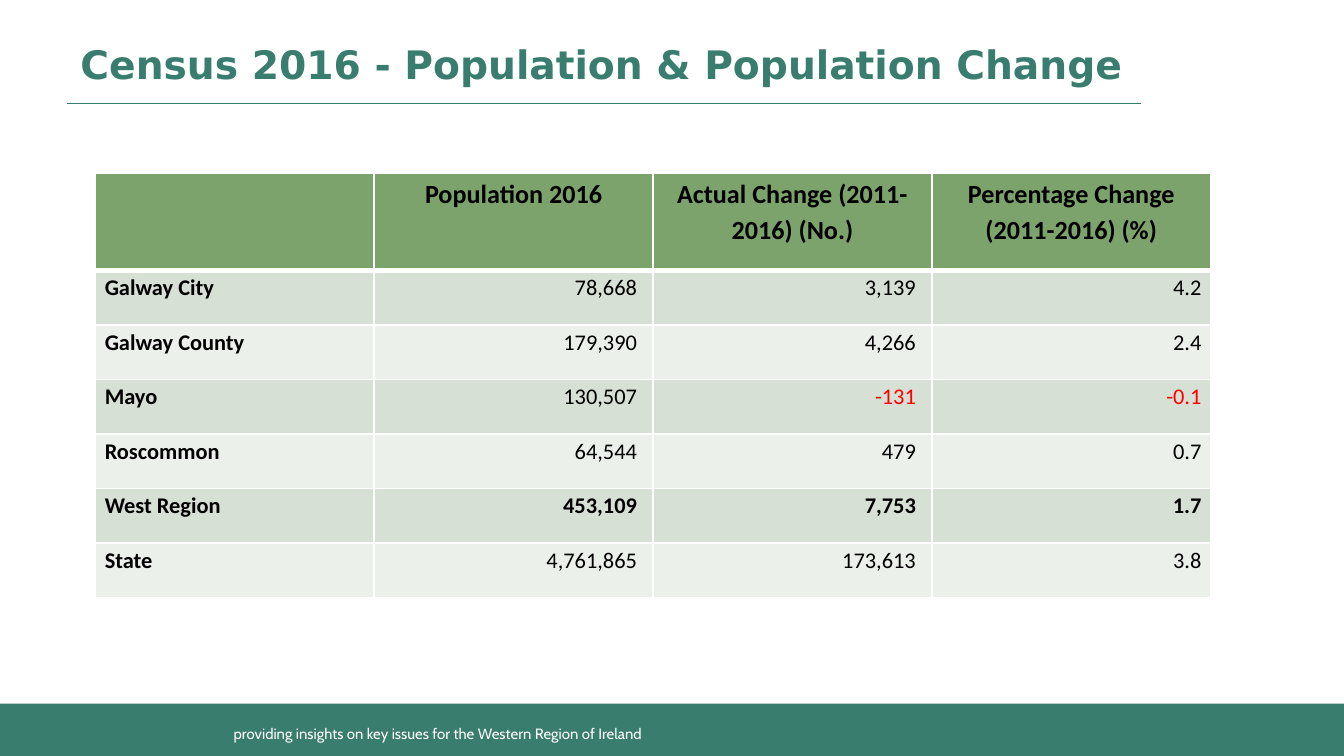
from lxml import etree
from pptx import Presentation
from pptx import util as u
from pptx.dml.color import RGBColor
from pptx.enum import shapes, text
from pptx.oxml import ns

COLORS = {
    "teal": "397D6E", "header": "7CA36C", "band_dark": "D7E0D4",
    "band_light": "ECF0EB", "white": "FFFFFF", "black": "000000",
    "negative": "FF0000",
}
PAGE_WIDTH = 10
PAGE_HEIGHT = PAGE_WIDTH * 9 / 16
HEADINGS = ["", "Population 2016", "Actual Change (2011-2016) (No.)",
            "Percentage Change (2011-2016) (%)"]
AREAS = [
    ["Galway City", "78,668", "3,139", "4.2"],
    ["Galway County", "179,390", "4,266", "2.4"],
    ["Mayo", "130,507", "-131", "-0.1"],
    ["Roscommon", "64,544", "479", "0.7"],
    ["West Region", "453,109", "7,753", "1.7"],
    ["State", "4,761,865", "173,613", "3.8"],
]


def rgb(name):
    return RGBColor.from_string(COLORS[name])


def inches(*lengths):
    return [u.Inches(length) for length in lengths]


def write(para, words, color, **formats):
    span = para.add_run()
    span.text = words
    span.font.color.rgb = rgb(color)
    for name, value in formats.items():
        setattr(span.font, name, value)


def add_label(page, bounds, words, color, **formats):
    box = page.shapes.add_textbox(*inches(*bounds))
    frame = box.text_frame
    frame.word_wrap = True
    frame.vertical_anchor = text.MSO_ANCHOR.MIDDLE
    write(frame.paragraphs[0], words, color, **formats)


def add_title(page, left, top, width, height):
    add_label(page, (left, top, width, 0.45),
              "Census 2016 - Population & Population Change", "teal",
              name="DejaVu Sans", size=u.Pt(21), bold=True)
    rule = page.shapes.add_connector(
        shapes.MSO_CONNECTOR.STRAIGHT,
        *inches(left, top + height, left + width, top + height))
    rule.line.color.rgb = rgb("teal")
    rule.line.width = u.Pt(1)
    etree.SubElement(rule._element.spPr, ns.qn("a:effectLst"))


def add_footer(page, left, top, width, height):
    band = page.shapes.add_shape(shapes.MSO_SHAPE.RECTANGLE,
                                 *inches(left, top, width, height))
    band.shadow.inherit = False
    band.fill.solid()
    band.fill.fore_color.rgb = rgb("teal")
    band.line.fill.background()
    add_label(page, (left + 1.64, top + 0.1, 4.31, 0.24),
              "providing insights on key issues for the Western Region of Ireland",
              "white", name="Cabin", size=u.Pt(8))


def add_borders(cell, bottom):
    """Draw white cell borders; bottom is the width of the lower one in points."""
    properties = cell._tc.get_or_add_tcPr()
    for side, points in (("L", 1), ("R", 1), ("T", 1), ("B", bottom)):
        line = etree.SubElement(properties, ns.qn(f"a:ln{side}"), w=str(u.Pt(points)))
        fill = etree.SubElement(line, ns.qn("a:solidFill"))
        etree.SubElement(fill, ns.qn("a:srgbClr"), val=COLORS["white"])


def fill_cell(cell, words, row, column):
    is_header = row == 0
    is_count = not is_header and column in (1, 2)
    margins = {"margin_left": 0.07, "margin_right": 0.12 if is_count else 0.07,
               "margin_top": 0, "margin_bottom": 0}
    for name, value in margins.items():
        setattr(cell, name, u.Inches(value))

    add_borders(cell, 3 if is_header else 1)
    cell.fill.solid()
    band = "band_dark" if row % 2 else "band_light"
    cell.fill.fore_color.rgb = rgb("header" if is_header else band)

    para = cell.text_frame.paragraphs[0]
    para.line_spacing = 1.15
    if is_header:
        para.alignment = text.PP_ALIGN.CENTER
    else:
        para.alignment = text.PP_ALIGN.RIGHT if column else text.PP_ALIGN.LEFT
    if words:
        is_total = not is_header and AREAS[row - 1][0] == "West Region"
        write(para, words, "negative" if words.startswith("-") else "black",
              name="Calibri", size=u.Pt(14 if is_header else 12),
              bold=is_header or column == 0 or is_total)


def add_population_table(page, left, top, width, height):
    rows = [HEADINGS] + AREAS
    header_height = 0.72
    body_height = (height - header_height) / len(AREAS)
    table = page.shapes.add_table(len(rows), len(HEADINGS),
                                  *inches(left, top, width, height)).table
    for column in table.columns:
        column.width = u.Inches(width / len(HEADINGS))
    for number, row in enumerate(table.rows):
        row.height = u.Inches(body_height if number else header_height)
        for column, cell in enumerate(row.cells):
            fill_cell(cell, rows[number][column], number, column)


def main():
    deck = Presentation()
    deck.slide_width, deck.slide_height = inches(PAGE_WIDTH, PAGE_HEIGHT)
    page = deck.slides.add_slide(deck.slide_layouts[6])
    footer_height = 0.39
    add_footer(page, 0, PAGE_HEIGHT - footer_height, PAGE_WIDTH, footer_height)
    add_title(page, 0.5, 0.25, 7.99, 0.52)
    add_population_table(page, 0.71, 1.29, 8.3, 3.16)
    deck.save("out.pptx")


if __name__ == "__main__":
    main()
